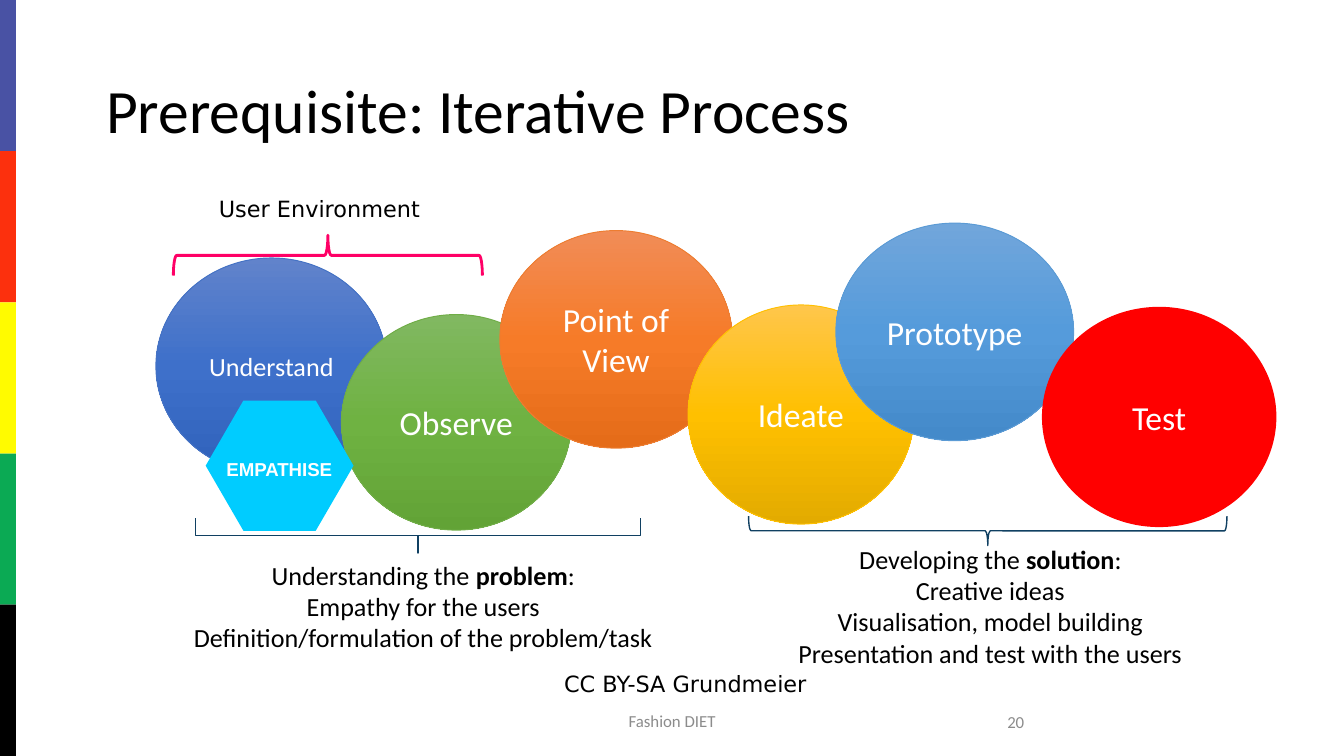
from lxml.etree import SubElement
from pptx import Presentation
from pptx.dml.color import RGBColor
from pptx.enum.shapes import MSO_SHAPE
from pptx.enum.text import MSO_ANCHOR, MSO_AUTO_SIZE, PP_ALIGN
from pptx.oxml.ns import qn
from pptx.util import Pt

COLORS = {
    "black": "000000", "white": "FFFFFF", "grey": "8C8C8C",
    "pink": "FF0066", "navy": "104062", "cyan": "00CCFF", "red": "FF0000",
}
STRIPES = ["4952A4", "FC300D", "FFFB00", "0BAA54", "000000"]

# Step name, (left, top, width, height) in the process box, font size,
# fill colours from top to bottom, outline colour, outline width
STEPS = [
    ("Understand", (0, 18.7, 123.8, 115.9), 14,
     ["6183CB", "3E70CA", "3062BB"], "4472C4", 0.5),
    ("Observe", (99.4, 49, 123.1, 115.5), 18,
     ["81B861", "6FB242", "62A336"], "70AD47", 0.5),
    ("Point of View", (184.3, 4, 124.6, 116.6), 18,
     ["F18C57", "F67B28", "E56C19"], "ED7D31", 0.5),
    ("Ideate", (285.1, 43.9, 121, 117.4), 18,
     ["FFC64B", "FFC000", "E3AB00"], "FFC000", 0.5),
    ("Prototype", (364.3, 0, 127.4, 116.6), 18,
     ["71A6DB", "559BDB", "448ACA"], "5B9BD5", 0.5),
    ("Test", (475.2, 45.4, 124.6, 117), 18,
     [COLORS["red"]], COLORS["red"], 1),
]


def rgb(color):
    return RGBColor.from_string(color)


def style_runs(paragraph, size, color, font="Calibri", bold=None):
    for run in paragraph.runs:
        run.font.size = Pt(size)
        run.font.name = font
        run.font.color.rgb = rgb(color)
        if bold is not None:
            run.font.bold = bold


def add_preset(slide, kind, left, top, width, height):
    preset = slide.shapes.add_shape(kind, Pt(left), Pt(top), Pt(width), Pt(height))
    preset.shadow.inherit = False
    return preset


def fill_shape(shape, colors):
    """One colour gives a solid fill, more give a vertical gradient."""
    if len(colors) == 1:
        shape.fill.solid()
        shape.fill.fore_color.rgb = rgb(colors[0])
        return
    shape.fill.gradient()
    gradient = shape._element.spPr.find(qn("a:gradFill"))
    for child in list(gradient):
        gradient.remove(child)
    stops = SubElement(gradient, qn("a:gsLst"))
    for index, color in enumerate(colors):
        position = 100000 * index // (len(colors) - 1)
        stop = SubElement(stops, qn("a:gs"), pos=str(position))
        SubElement(stop, qn("a:srgbClr"), val=color)
    SubElement(gradient, qn("a:lin"), ang="5400000", scaled="0")


def add_label(slide, text, left, top, width, height, size, color="black",
              font="Calibri", align=PP_ALIGN.CENTER, anchor=MSO_ANCHOR.TOP,
              bold=None, wrap=True):
    label = slide.shapes.add_textbox(Pt(left), Pt(top), Pt(width), Pt(height))
    frame = label.text_frame
    frame.word_wrap = wrap
    frame.vertical_anchor = anchor
    frame.text = text
    for paragraph in frame.paragraphs:
        paragraph.alignment = align
        style_runs(paragraph, size, COLORS[color], font, bold)
    return frame


def add_brace(slide, left, top, width, height, color, weight, up=False):
    """Lying brace in the given visible box, pointing down or up."""
    brace = add_preset(slide, MSO_SHAPE.RIGHT_BRACE,
                       left + (width - height) / 2,
                       top + (height - width) / 2, height, width)
    brace.rotation = 90
    if up:
        brace._element.spPr.find(qn("a:xfrm")).set("flipH", "1")
    brace.fill.background()
    brace.line.color.rgb = rgb(COLORS[color])
    brace.line.width = Pt(weight)
    return brace


def add_stripes(slide, left, top, width, height):
    stripe_height = height / len(STRIPES)
    for index, color in enumerate(STRIPES):
        stripe = add_preset(slide, MSO_SHAPE.RECTANGLE, left,
                            top + index * stripe_height, width, stripe_height)
        fill_shape(stripe, [color])
        stripe.line.fill.background()


def add_title(slide, left, top, width, height):
    title = slide.shapes.title
    title.left, title.top = Pt(left), Pt(top)
    title.width, title.height = Pt(width), Pt(height)
    frame = title.text_frame
    frame.text = "Prerequisite: Iterative Process"
    frame.auto_size = MSO_AUTO_SIZE.NONE
    frame.vertical_anchor = MSO_ANCHOR.MIDDLE
    heading = frame.paragraphs[0]
    heading.alignment = PP_ALIGN.LEFT
    heading.line_spacing = 0.9
    style_runs(heading, 33, COLORS["black"])


def add_environment(slide, left, top, width, height):
    add_label(slide, "User Environment", left + 17.3, top, 124.6, 21.6, 12,
              font="DejaVu Sans", align=PP_ALIGN.LEFT)
    add_brace(slide, left, top + height - 21.6, width, 21.6, "pink", 1.5, up=True)


def add_steps(slide, left, top):
    for name, (x, y, width, height), size, colors, outline, weight in STEPS:
        step = add_preset(slide, MSO_SHAPE.OVAL, left + x, top + y, width, height)
        fill_shape(step, colors)
        step.line.color.rgb = rgb(outline)
        step.line.width = Pt(weight)
        frame = step.text_frame
        frame.text = name
        frame.vertical_anchor = MSO_ANCHOR.MIDDLE
        frame.paragraphs[0].alignment = PP_ALIGN.CENTER
        style_runs(frame.paragraphs[0], size, COLORS["white"])


def add_empathise(slide, left, top, width, height):
    hexagon = add_preset(slide, MSO_SHAPE.HEXAGON, left, top, width, height)
    hexagon.adjustments[0] = 0.29
    fill_shape(hexagon, [COLORS["cyan"]])
    hexagon.line.fill.background()
    add_label(slide, "EMPATHISE", left + 4, top + 27.4, 73.4, 19.4, 10, "white",
              "Arial", PP_ALIGN.LEFT, bold=True, wrap=False)


def add_phase(slide, left, top, width, height, lead, keyword, points,
              brace_box, text_drop):
    """Brace with the phase description below it."""
    x, brace_width, brace_height = brace_box
    frame = add_label(slide, "\n".join([lead, *points]), left, top + text_drop,
                      width, height - text_drop, 14)
    opening = frame.paragraphs[0]
    for text in (keyword, ":"):
        opening.add_run().text = text
    style_runs(opening, 14, COLORS["black"])
    opening.runs[1].font.bold = True
    return add_brace(slide, left + x, top, brace_width, brace_height, "navy", 0.75)


def add_footer(slide, left, top, width, height):
    add_label(slide, "Fashion DIET", left, top, width, height, 9, "grey",
              anchor=MSO_ANCHOR.MIDDLE)
    add_label(slide, "20", left + 155.5, top + 0.7, 162, height, 9, "grey",
              align=PP_ALIGN.RIGHT, anchor=MSO_ANCHOR.MIDDLE)


def main():
    deck = Presentation()
    deck.slide_width, deck.slide_height = Pt(720), Pt(405)
    slide = deck.slides.add_slide(deck.slide_layouts[5])

    # Frame of the slide
    add_stripes(slide, 0, 0, 8.6, 405)
    add_title(slide, 49.7, 21.6, 620.6, 78.5)
    add_footer(slide, 238.3, 375.1, 243.4, 21.6)

    # Process with its phases
    add_environment(slide, 92.9, 100.8, 165.6, 46.8)
    problem_brace = add_phase(
        slide, 54, 277.6, 345.6, 76.6, "Understanding the ", "problem",
        ["Empathy for the users", "Definition/formulation of the problem/task"],
        (50.8, 238.3, 18.7), 18.3)
    problem_brace.adjustments[0] = 0
    add_steps(slide, 83.5, 119.5)
    add_empathise(slide, 110.2, 214.6, 79.2, 69.8)
    add_phase(
        slide, 343.4, 276.5, 374.4, 103, "Developing the ", "solution",
        ["Creative ideas", "Visualisation, model building",
         "Presentation and test with the users"],
        (57.6, 256.3, 15.8), 10.8)

    # Licence line
    add_label(slide, "CC BY-SA Grundmeier", 292.3, 355.7, 149.8, 21.6, 12,
              font="DejaVu Sans")
    deck.save("out.pptx")


if __name__ == "__main__":
    main()
